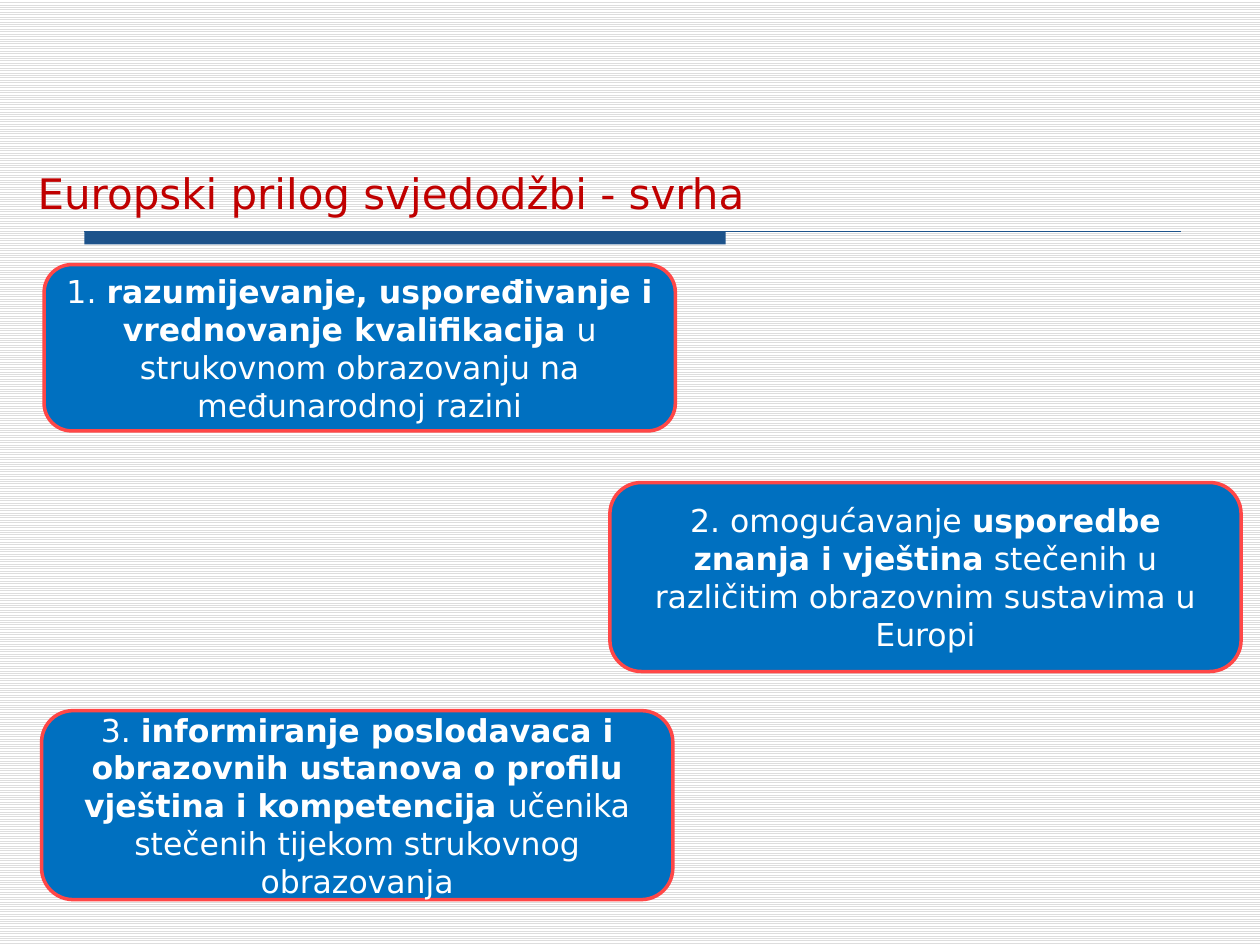
from pptx import Presentation
from pptx.dml.color import RGBColor
from pptx.enum.dml import MSO_PATTERN
from pptx.enum.shapes import MSO_CONNECTOR, MSO_SHAPE
from pptx.enum.text import MSO_ANCHOR, PP_ALIGN
from pptx.oxml.ns import qn
from pptx.util import Inches, Pt

FONT = "DejaVu Sans"
NAVY, BLUE, RED, CORAL, WHITE = "1D538B", "0070C0", "C00000", "FF4747", "FFFFFF"
CARD_WIDTH = 5.01
CARDS = [
    (0.35, 2.1, 1.32, [
        ("1. ", False),
        ("razumijevanje, uspoređivanje i vrednovanje kvalifikacija ", True),
        ("u strukovnom obrazovanju na međunarodnoj razini", False)]),
    (4.84, 3.83, 1.5, [
        ("2. omogućavanje ", False),
        ("usporedbe znanja i vještina", True),
        (" stečenih u različitim obrazovnim sustavima u Europi", False)]),
    (0.33, 5.64, 1.5, [
        ("3. ", False),
        ("informiranje poslodavaca i obrazovnih ustanova o profilu "
         "vještina i kompetencija ", True),
        ("učenika stečenih tijekom strukovnog obrazovanja", False)]),
]


def color(value):
    """Return the colour for a hex string."""
    return RGBColor.from_string(value)


def set_background(slide):
    """Fill the background with light horizontal stripes."""
    fill = slide.background.fill
    fill.patterned()
    fill.pattern = MSO_PATTERN.LIGHT_HORIZONTAL
    fill.fore_color.rgb = color("DDDDDD")
    fill.back_color.rgb = color(WHITE)


def add_runs(paragraph, runs, size, text_color):
    """Add (text, bold) runs to a paragraph."""
    for text, bold in runs:
        run = paragraph.add_run()
        run.text = text
        run.font.name = FONT
        run.font.size = Pt(size)
        run.font.bold = bold
        run.font.color.rgb = color(text_color)


def add_filled_shape(slide, kind, left, top, width, height, fill):
    """Add a preset shape with a plain fill and no shadow."""
    shape = slide.shapes.add_shape(
        kind, Inches(left), Inches(top), Inches(width), Inches(height))
    shape.shadow.inherit = False
    shape.fill.solid()
    shape.fill.fore_color.rgb = color(fill)
    return shape


def add_title_rule(slide):
    """Add the thick bar and the thin line under the title."""
    bar = add_filled_shape(slide, MSO_SHAPE.RECTANGLE, 0.67, 1.84, 5.09, 0.1, NAVY)
    bar.line.fill.background()
    line = slide.shapes.add_connector(
        MSO_CONNECTOR.STRAIGHT, Inches(0.67), Inches(1.84), Inches(9.37), Inches(1.84))
    line.line.color.rgb = color(NAVY)
    line.line.width = Pt(0.75)
    properties = line._element.spPr
    properties.append(properties.makeelement(qn("a:effectLst"), {}))


def add_title(slide, text):
    """Add the slide title."""
    box = slide.shapes.add_textbox(Inches(0.2), Inches(1.15), Inches(9.55), Inches(0.63))
    text_frame = box.text_frame
    text_frame.word_wrap = True
    text_frame.vertical_anchor = MSO_ANCHOR.BOTTOM
    add_runs(text_frame.paragraphs[0], [(text, False)], 24, RED)


def add_card(slide, left, top, height, runs):
    """Add a rounded card with centred text."""
    card = add_filled_shape(slide, MSO_SHAPE.FLOWCHART_ALTERNATE_PROCESS,
                            left, top, CARD_WIDTH, height, BLUE)
    card.line.color.rgb = color(CORAL)
    card.line.width = Pt(2)
    text_frame = card.text_frame
    text_frame.word_wrap = True
    text_frame.vertical_anchor = MSO_ANCHOR.MIDDLE
    paragraph = text_frame.paragraphs[0]
    paragraph.alignment = PP_ALIGN.CENTER
    add_runs(paragraph, runs, 18, WHITE)


def main():
    """Build and save the slide."""
    presentation = Presentation()
    presentation.slide_width = Inches(10)
    presentation.slide_height = Inches(7.5)
    slide = presentation.slides.add_slide(presentation.slide_layouts[6])
    set_background(slide)
    add_title_rule(slide)
    add_title(slide, "Europski prilog svjedodžbi - svrha")
    for card in CARDS:
        add_card(slide, *card)
    presentation.save("out.pptx")


if __name__ == "__main__":
    main()
